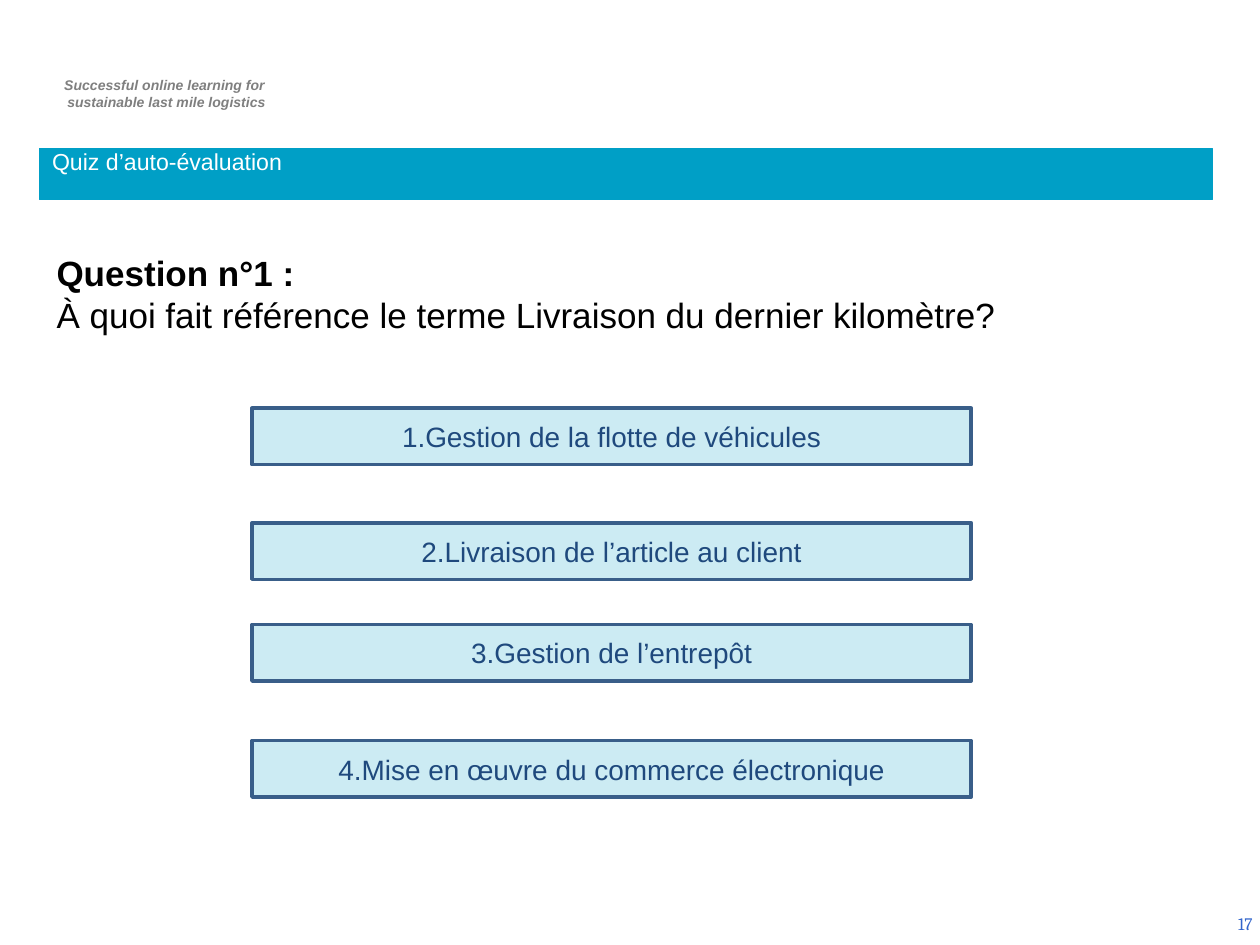
from pptx import Presentation
from pptx.dml.color import RGBColor
from pptx.enum.shapes import MSO_SHAPE as Shape
from pptx.enum.text import MSO_ANCHOR as Anchor, PP_ALIGN as Align
from pptx.oxml.ns import qn
from pptx.util import Cm, Pt
from lxml.etree import SubElement

# Content
TAGLINE = ["Successful online learning for ", "sustainable last mile logistics"]
TITLE = "Quiz d’auto-évaluation"
QUESTION = ["Question n°1 :", "À quoi fait référence le terme Livraison du dernier kilomètre?"]
ANSWERS = [  # text, top in cm
    ("1.Gestion de la flotte de véhicules", 8.23),
    ("2.Livraison de l’article au client", 10.54),
    ("3.Gestion de l’entrepôt", 12.59),
    ("4.Mise en œuvre du commerce électronique", 14.93),
]
PAGE_NUMBER = "17"

TEAL, NAVY, BORDER = "009FC6", "1F497D", "395E89"
GREY, WHITE, BLACK, BLUE = "7F7F7F", "FFFFFF", "000000", "3366CC"


def color(value):
    return RGBColor.from_string(value)


def write(shape, lines, size, text_color, align=Align.LEFT, anchor=Anchor.TOP, font="Arial"):
    frame = shape.text_frame
    frame.word_wrap = True
    frame.vertical_anchor = anchor
    frame.text = "\n".join(lines)
    for paragraph in frame.paragraphs:
        paragraph.alignment = align
        paragraph.font.name = font
        paragraph.font.size = Pt(size)
        paragraph.font.color.rgb = color(text_color)
    return frame.paragraphs


def add_text(left, top, width, height, *args, **options):
    box = slide.shapes.add_textbox(Cm(left), Cm(top), Cm(width), Cm(height))
    return write(box, *args, **options)


def add_bar(left, top, width, height, line_color, line_width):
    bar = slide.shapes.add_shape(Shape.RECTANGLE, Cm(left), Cm(top), Cm(width), Cm(height))
    bar.shadow.inherit = False
    bar.fill.solid()
    bar.fill.fore_color.rgb = color(TEAL)
    bar.line.color.rgb = color(line_color)
    bar.line.width = Pt(line_width)
    return bar


def set_opacity(shape, percent):
    fill_color = shape.element.spPr.find(qn("a:solidFill"))[0]
    SubElement(fill_color, qn("a:alpha"), val=str(percent * 1000))


presentation = Presentation()
presentation.slide_width, presentation.slide_height = Cm(25.4), Cm(19.05)
slide = presentation.slides.add_slide(presentation.slide_layouts[6])

# Tagline and page number
for paragraph in add_text(0.78, 1.42, 5.16, 0.94, TAGLINE, 8, GREY, Align.CENTER):
    paragraph.font.bold = paragraph.font.italic = True
add_text(19.58, 18.11, 5.92, 1.02, [PAGE_NUMBER], 10, BLUE, Align.RIGHT, Anchor.MIDDLE, "Cambria")

# Title bar
title_bar = add_bar(0.8, 2.99, 23.64, 1.04, TEAL, 0.75)
write(title_bar, [TITLE], 13.2, WHITE)[0].line_spacing = 0.7

# Question
add_text(0.89, 4.95, 23.65, 1.96, QUESTION, 20, BLACK)[0].font.bold = True

# Answers
for answer, top in ANSWERS:
    answer_bar = add_bar(5.08, top, 14.5, 1.14, BORDER, 2)
    set_opacity(answer_bar, 20)
    write(answer_bar, [answer], 16, NAVY, Align.CENTER, Anchor.MIDDLE)

presentation.save("out.pptx")
